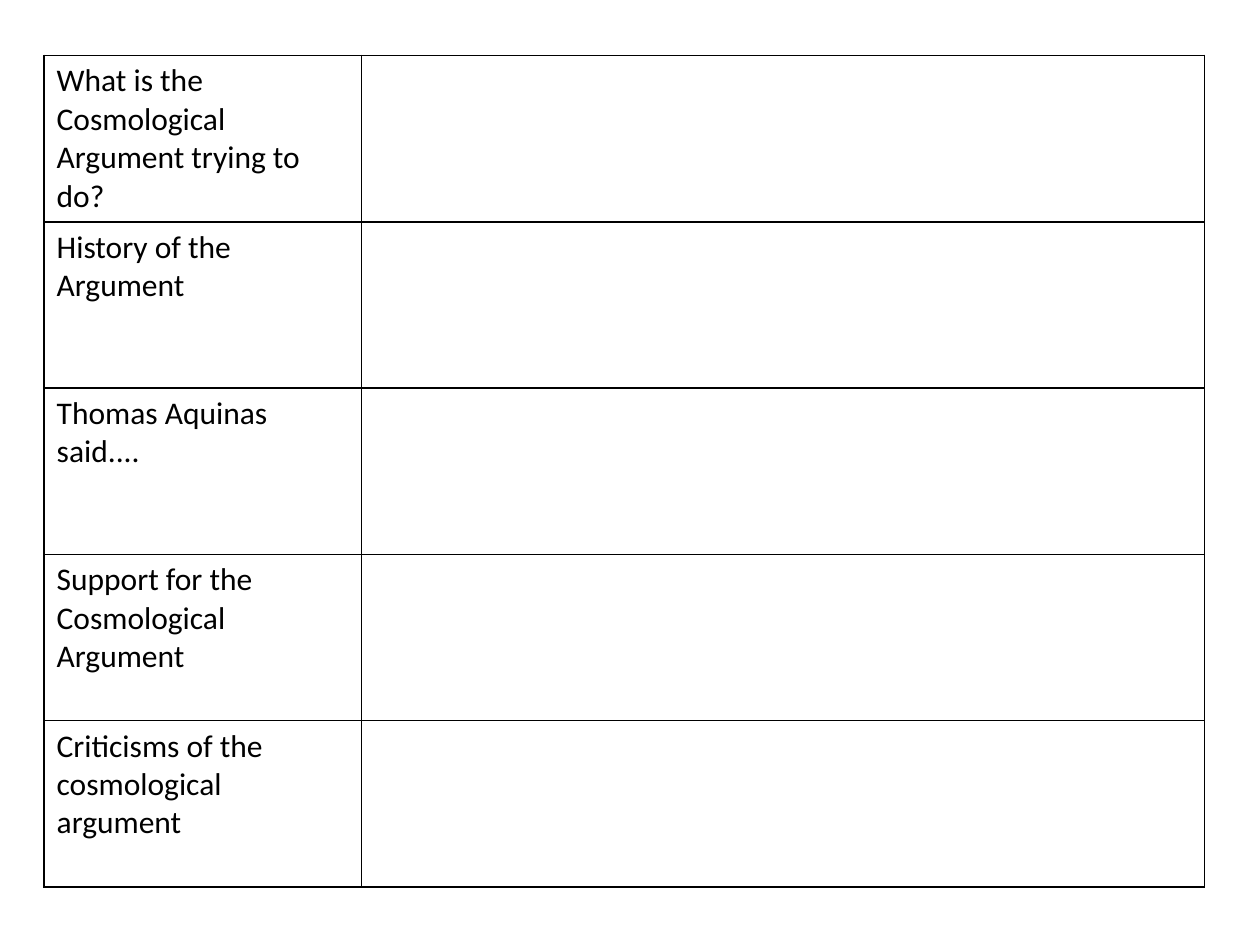
from lxml.etree import SubElement
from pptx import Presentation
from pptx.dml.color import RGBColor
from pptx.oxml.ns import qn
from pptx.util import Inches, Pt

PROMPTS = [
    "What is the Cosmological Argument trying to do?",
    "History of the Argument",
    "Thomas Aquinas said....",
    "Support for the Cosmological Argument",
    "Criticisms of the cosmological argument",
]
LEFT, TOP = 0.35, 0.44
COLUMN_WIDTHS = [2.52, 6.69]
ROW_HEIGHT = 1.32
BLACK = "000000"


def color(value):
    return RGBColor.from_string(value)


def add_borders(cell):
    properties = cell._tc.get_or_add_tcPr()
    for side in ("a:lnL", "a:lnR", "a:lnT", "a:lnB"):
        line = SubElement(properties, qn(side), w=str(Pt(1)))
        fill = SubElement(line, qn("a:solidFill"))
        SubElement(fill, qn("a:srgbClr"), val=BLACK)


def add_text(cell, text):
    span = cell.text_frame.paragraphs[0].add_run()
    span.text = text
    span.font.name = "Calibri"
    span.font.size = Pt(18)
    span.font.color.rgb = color(BLACK)


deck = Presentation()
deck.slide_width, deck.slide_height = Inches(10), Inches(7.5)
page = deck.slides.add_slide(deck.slide_layouts[6])

table = page.shapes.add_table(
    len(PROMPTS), len(COLUMN_WIDTHS), Inches(LEFT), Inches(TOP),
    Inches(sum(COLUMN_WIDTHS)), Inches(ROW_HEIGHT * len(PROMPTS)),
).table
table.first_row = table.horz_banding = False
for column, width in zip(table.columns, COLUMN_WIDTHS):
    column.width = Inches(width)

for row, prompt in zip(table.rows, PROMPTS):
    row.height = Inches(ROW_HEIGHT)
    for cell in row.cells:
        add_borders(cell)
        cell.fill.background()
    add_text(row.cells[0], prompt)

deck.save("out.pptx")
